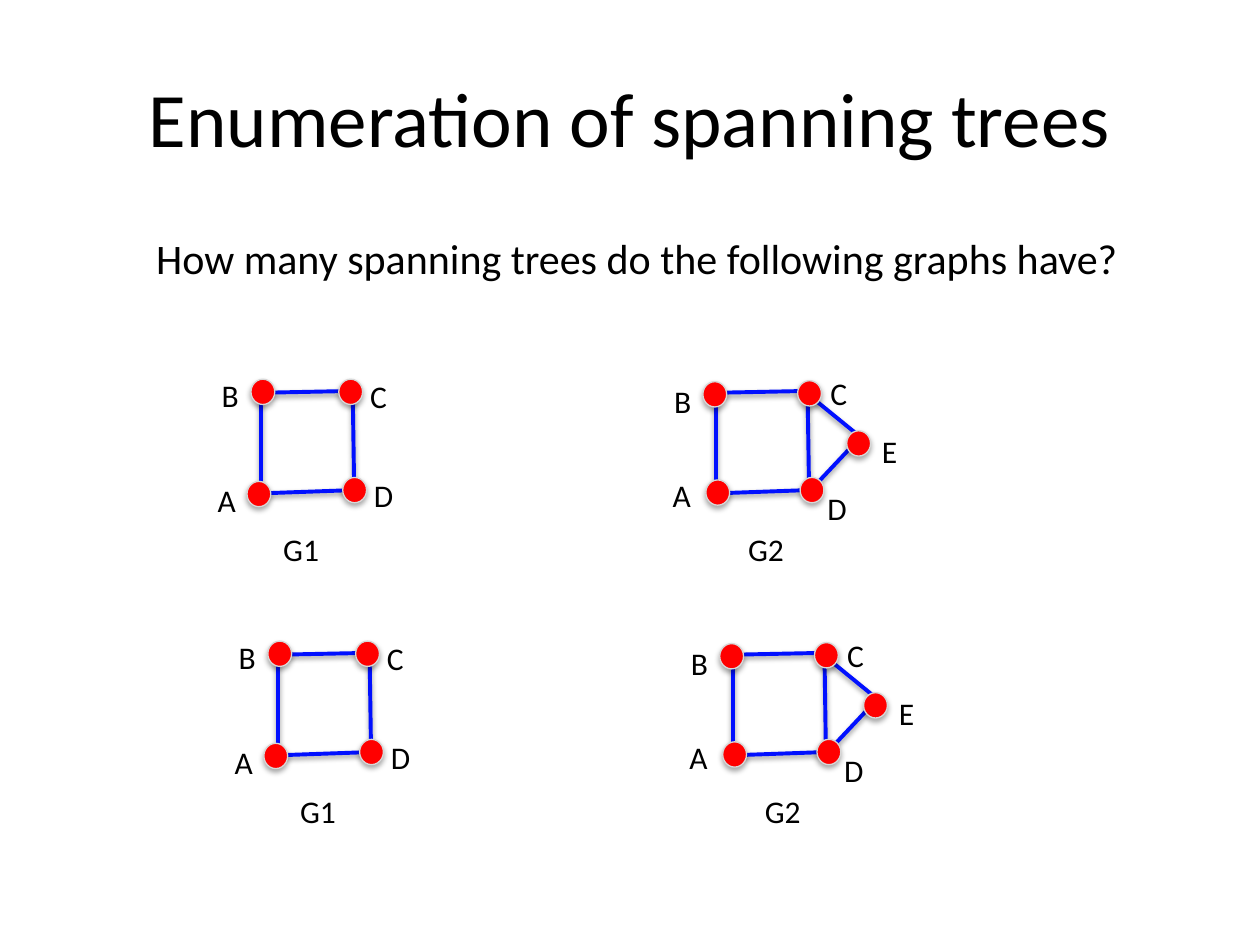
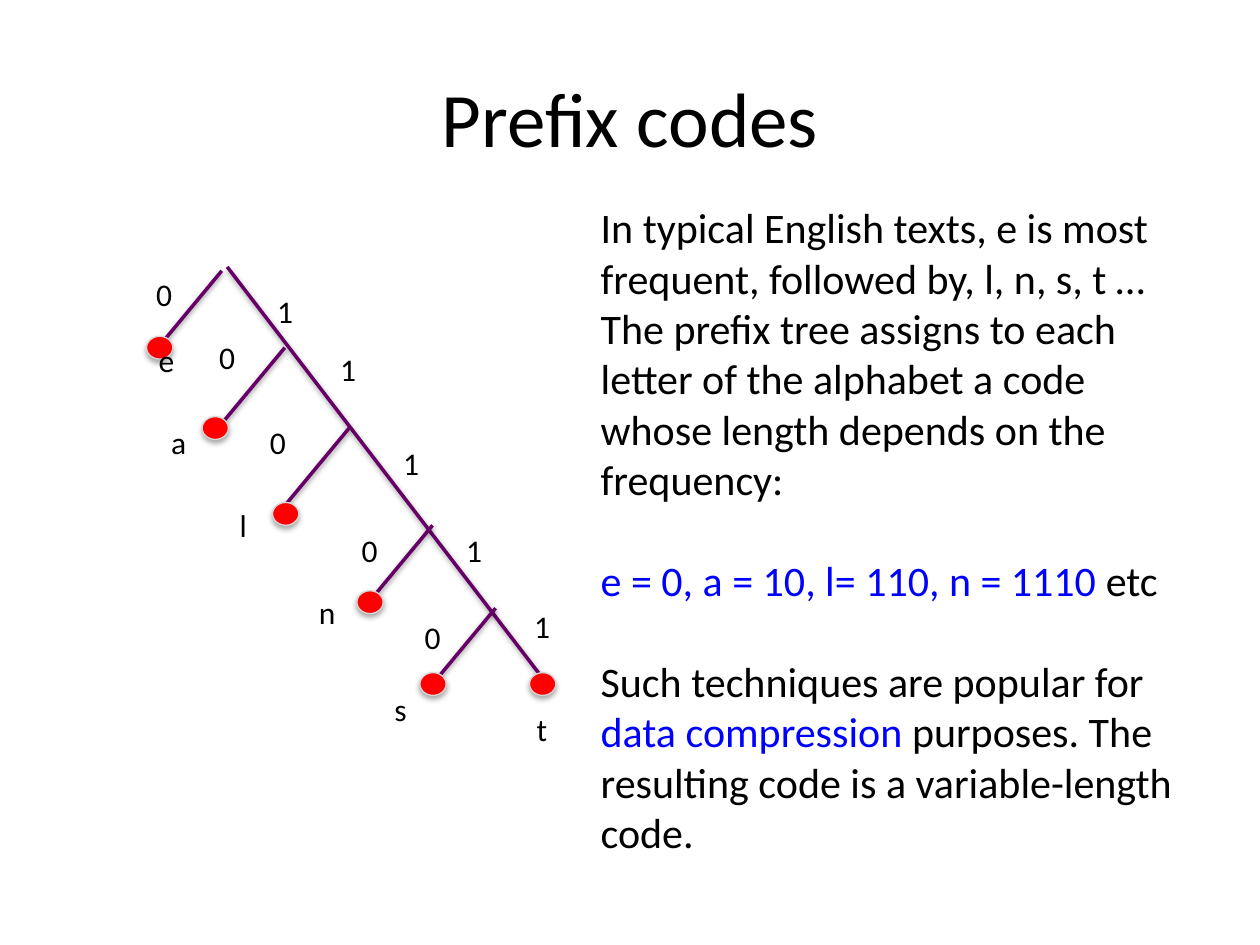
from lxml.etree import SubElement
from pptx import Presentation
from pptx.dml.color import RGBColor
from pptx.enum.shapes import MSO_CONNECTOR, MSO_SHAPE
from pptx.enum.text import MSO_ANCHOR, PP_ALIGN
from pptx.oxml.ns import qn
from pptx.util import Cm, Pt

FONT = "Calibri"
BLACK = "000000"
ACCENT = "0000FF"
GRAPH_BLUE = "0110FF"
TREE_PURPLE = "660066"
DOT_RED = "FF0000"
DOT_RIM = "D8D8D8"

# All positions are in centimetres, relative to the box of the figure.
SQUARE_EDGES = [
    ((3.0, 0.46), (1.04, 0.5)),
    ((1.12, 0.46), (1.12, 2.46)),
    ((2.97, 0.46), (3.0, 2.46)),
    ((3.0, 2.46), (1.04, 2.53)),
]
TRIANGLE_EDGES = [((4.01, 1.42), (3.05, 2.44)), ((2.92, 0.48), (4.01, 1.37))]

G1 = {
    "edges": SQUARE_EDGES,
    "nodes": [(1.08, 2.54), (1.16, 0.48), (2.93, 0.48), (3.01, 2.46)],
    "labels": {"A": (0, 2.16), "B": (0.08, 0.03), "C": (3.07, 0.05),
               "D": (3.15, 2.06), "G1": (1.32, 3.15)},
}
G2 = {
    "edges": TRIANGLE_EDGES + SQUARE_EDGES,
    "nodes": [(1.16, 2.51), (1.1, 0.53), (3.01, 0.51), (3.06, 2.46), (4.0, 1.52)],
    "labels": {"A": (0, 2.06), "B": (0.03, 0.15), "C": (3.18, 0),
               "D": (3.12, 2.31), "E": (4.22, 1.17), "G2": (1.52, 3.15)},
}

TRUNK = ((1.68, 0), (8.13, 8.41))
BRANCH_STARTS = [(1.57, 0.08), (2.84, 1.63), (4.14, 3.25), (5.82, 5.21), (7.09, 6.88)]
BRANCH_STEP = (-1.27, 1.53)
# letter: (centre of the leaf, corner of its label)
LEAVES = {
    "e": ((0.32, 1.63), (0.05, 1.37)),
    "a": ((1.44, 3.25), (0.3, 3.02)),
    "l": ((2.86, 4.98), (1.68, 4.7)),
    "n": ((4.56, 6.76), (3.28, 6.45)),
    "s": ((5.83, 8.41), (4.8, 8.41)),
    "t": ((8.04, 8.41), (7.67, 8.81)),
}
BITS = {
    "0": [(0, 0.03), (1.27, 1.3), (2.29, 3.02), (4.14, 5.21), (5.41, 6.96)],
    "1": [(2.44, 0.38), (3.71, 1.55), (4.98, 3.45), (6.25, 5.21), (7.62, 6.73)],
}

# Text between bars takes the accent colour.
CODE_TEXT = [
    "In typical English texts, e is most frequent, followed by, l, n, s, t … "
    "The prefix tree assigns to each letter of the alphabet a code whose length "
    "depends on the frequency:",
    "|e = 0, a = 10, l= 110, n = 1110 |etc",
    "Such techniques are popular for",
    "|data compression |purposes. The",
    "resulting code is a variable-length",
    "code.",
]


def color(hex_string):
    return RGBColor.from_string(hex_string)


def shift(origin, point):
    return origin[0] + point[0], origin[1] + point[1]


def add_shadow(shape, opacity, distance):
    """Give the shape a soft black shadow straight below it."""
    properties = shape._element.spPr
    effects = SubElement(properties, qn("a:effectLst"))
    shadow = SubElement(effects, qn("a:outerShdw"), blurRad=str(Pt(3.1)),
                        dist=str(Pt(distance)), dir="5400000", rotWithShape="0")
    black = SubElement(shadow, qn("a:srgbClr"), val=BLACK)
    SubElement(black, qn("a:alpha"), val=str(opacity * 1000))


def add_text(slide, paragraphs, left, top, width, height, size=18,
             align=PP_ALIGN.LEFT, anchor=MSO_ANCHOR.TOP, gaps=()):
    """Add a text box; the paragraphs numbered in gaps get a line of space above."""
    box = slide.shapes.add_textbox(Cm(left), Cm(top), Cm(width), Cm(height))
    frame = box.text_frame
    frame.word_wrap = True
    frame.vertical_anchor = anchor
    for number, text in enumerate(paragraphs):
        paragraph = frame.add_paragraph() if number else frame.paragraphs[0]
        paragraph.alignment = align
        if number in gaps:
            paragraph.space_before = Pt(size * 1.2)
        for index, piece in enumerate(text.split("|")):
            if piece:
                run = paragraph.add_run()
                run.text = piece
                run.font.name = FONT
                run.font.size = Pt(size)
                run.font.color.rgb = color(ACCENT if index % 2 else BLACK)


def add_title(slide, text):
    add_text(slide, [text], 1.27, 0.76, 22.86, 3.18, size=44,
             align=PP_ALIGN.CENTER, anchor=MSO_ANCHOR.MIDDLE)


def add_label(slide, text, position):
    add_text(slide, [text], *position, width=0.9 if len(text) == 1 else 1.3, height=1.02)


def add_edge(slide, start, end, line_color, width):
    line = slide.shapes.add_connector(
        MSO_CONNECTOR.STRAIGHT, *(Cm(value) for value in start + end))
    line.line.color.rgb = color(line_color)
    line.line.width = Pt(width)
    add_shadow(line, 38, 1.6)


def add_dot(slide, center, width, height):
    dot = slide.shapes.add_shape(
        MSO_SHAPE.OVAL, Cm(center[0] - width / 2), Cm(center[1] - height / 2),
        Cm(width), Cm(height))
    dot.fill.solid()
    dot.fill.fore_color.rgb = color(DOT_RED)
    dot.line.color.rgb = color(DOT_RIM)
    dot.line.width = Pt(0.75)
    add_shadow(dot, 35, 1.8)


def draw_graph(slide, graph, origin):
    for start, end in graph["edges"]:
        add_edge(slide, shift(origin, start), shift(origin, end), GRAPH_BLUE, 2.25)
    for center in graph["nodes"]:
        add_dot(slide, shift(origin, center), 0.48, 0.51)
    for text, position in graph["labels"].items():
        add_label(slide, text, shift(origin, position))


def draw_prefix_tree(slide, origin):
    branches = [(start, shift(start, BRANCH_STEP)) for start in BRANCH_STARTS]
    for start, end in [TRUNK] + branches:
        add_edge(slide, shift(origin, start), shift(origin, end), TREE_PURPLE, 2)
    for center, _ in LEAVES.values():
        add_dot(slide, shift(origin, center), 0.53, 0.46)
    for letter, (_, position) in LEAVES.items():
        add_label(slide, letter, shift(origin, position))
    for bit, positions in BITS.items():
        for position in positions:
            add_label(slide, bit, shift(origin, position))


def build_spanning_trees(slide):
    add_title(slide, "Enumeration of spanning trees")
    add_text(slide, ["How many spanning trees do the following graphs have?"],
             2.9, 4.57, 20.47, 1.27, size=24)
    for row_origin in ((4.14, 7.42), (4.48, 12.7)):
        draw_graph(slide, G1, row_origin)
        draw_graph(slide, G2, shift(row_origin, (9.17, 0)))


def build_prefix_codes(slide):
    add_title(slide, "Prefix codes")
    draw_prefix_tree(slide, (2.9, 5.38))
    add_text(slide, CODE_TEXT, 11.86, 3.94, 12.67, 13.59, size=24, gaps=(1, 2))


def main():
    presentation = Presentation()
    presentation.slide_width = Cm(25.4)
    presentation.slide_height = Cm(19.05)
    blank = presentation.slide_layouts[6]
    for build in (build_spanning_trees, build_prefix_codes):
        build(presentation.slides.add_slide(blank))
    presentation.save("out.pptx")


if __name__ == "__main__":
    main()
